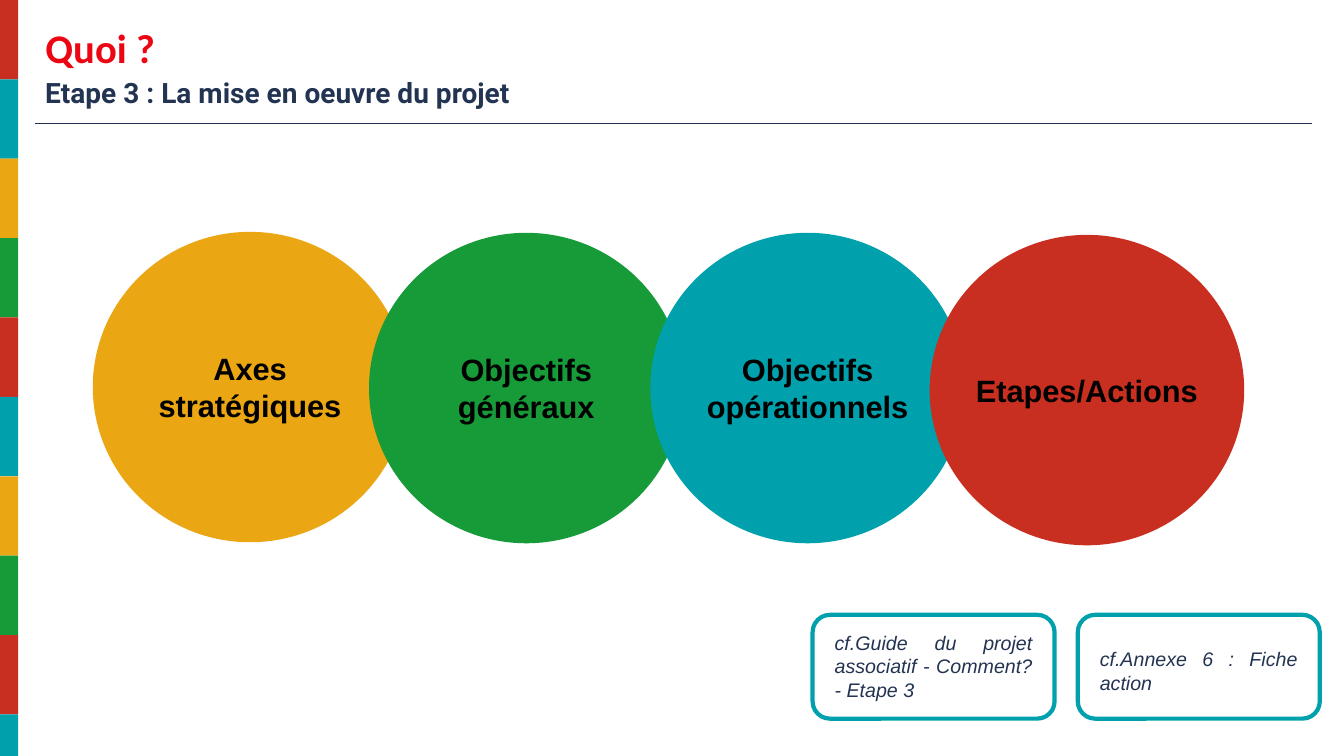
from lxml import etree
from pptx import Presentation
from pptx.dml.color import RGBColor
from pptx.enum import shapes, text
from pptx.oxml.ns import qn
from pptx.util import Inches, Pt

RED = RGBColor(0xC9, 0x2F, 0x20)
TEAL = RGBColor(0x00, 0xA1, 0xAC)
AMBER = RGBColor(0xEB, 0xA6, 0x13)
GREEN = RGBColor(0x17, 0x9A, 0x38)
TITLE_RED = RGBColor(0xEC, 0x06, 0x14)
NAVY = RGBColor(0x23, 0x33, 0x52)
RULE_NAVY = RGBColor(0x21, 0x30, 0x4E)
BLACK = RGBColor(0, 0, 0)

SLIDE_HEIGHT = 7.5
STRIPE_HEIGHT = 0.7875
CIRCLE_WIDTH, CIRCLE_HEIGHT = 3.12, 3.08
LABEL_WIDTH = 2.55
NOTE_WIDTH, NOTE_HEIGHT, NOTE_TOP = 2.4, 1.03, 6.1


class SlideBuilder:
    """Holds the current slide and its common text and shape style."""

    def __init__(self, slide):
        self.slide = slide

    def set_text(self, shape, words, size, color, font="Arial", bold=False, italic=False,
                 align=text.PP_ALIGN.LEFT, inset=0.1, anchor=text.MSO_ANCHOR.MIDDLE):
        frame = shape.text_frame
        frame.text = words
        frame.word_wrap = True
        frame.auto_size = text.MSO_AUTO_SIZE.NONE
        frame.vertical_anchor = anchor
        frame.margin_left = frame.margin_right = Inches(0.1)
        frame.margin_top = frame.margin_bottom = Inches(inset)
        paragraph = frame.paragraphs[0]
        paragraph.alignment = align
        style = paragraph.runs[0].font
        style.name, style.size = font, Pt(size)
        style.bold, style.italic = bold, italic
        style.color.rgb = color

    def title(self, words, left, top, width, height):
        title = self.slide.shapes.title
        title.left, title.top = Inches(left), Inches(top)
        title.width, title.height = Inches(width), Inches(height)
        self.set_text(title, words, 29, TITLE_RED, "Calibri", bold=True, inset=0.05)

    def text_box(self, words, left, top, width, height, size, color, **style):
        box = self.slide.shapes.add_textbox(
            Inches(left), Inches(top), Inches(width), Inches(height))
        self.set_text(box, words, size, color, **style)

    def shape(self, kind, left, top, width, height, fill=None, outline=None):
        shape = self.slide.shapes.add_shape(
            kind, Inches(left), Inches(top), Inches(width), Inches(height))
        shape.shadow.inherit = False
        if fill is None:
            shape.fill.background()
        else:
            shape.fill.solid()
            shape.fill.fore_color.rgb = fill
        if outline is None:
            shape.line.fill.background()
        else:
            shape.line.color.rgb = outline
            shape.line.width = Pt(3)

    def rule(self, left, right, top):
        line = self.slide.shapes.add_connector(
            shapes.MSO_CONNECTOR.STRAIGHT,
            Inches(left), Inches(top), Inches(right), Inches(top))
        line.line.color.rgb = RULE_NAVY
        line.line.width = Pt(0.75)
        etree.SubElement(line._element.spPr, qn("a:effectLst"))

    def circle(self, words, left, top, fill, label_height):
        self.shape(shapes.MSO_SHAPE.OVAL, left, top, CIRCLE_WIDTH, CIRCLE_HEIGHT, fill)
        self.text_box(words, left + (CIRCLE_WIDTH - LABEL_WIDTH) / 2,
                      top + (CIRCLE_HEIGHT - label_height) / 2,
                      LABEL_WIDTH, label_height, 22, BLACK,
                      bold=True, align=text.PP_ALIGN.CENTER)

    def note(self, words, left, text_top, text_height):
        self.shape(shapes.MSO_SHAPE.ROUNDED_RECTANGLE, left, NOTE_TOP,
                   NOTE_WIDTH, NOTE_HEIGHT, outline=TEAL)
        self.text_box(words, left + 0.12, text_top, 2.16, text_height, 14, NAVY,
                      italic=True, align=text.PP_ALIGN.JUSTIFY)


def main():
    presentation = Presentation()
    presentation.slide_width = Inches(13.33)
    presentation.slide_height = Inches(SLIDE_HEIGHT)
    builder = SlideBuilder(presentation.slides.add_slide(presentation.slide_layouts[5]))

    # Coloured stripes on the left edge, the last one cut at the slide's foot
    stripe_colors = [RED, TEAL, AMBER, GREEN]
    for index in range(10):
        top = index * STRIPE_HEIGHT
        builder.shape(shapes.MSO_SHAPE.RECTANGLE, -0.02, top, 0.2,
                      min(STRIPE_HEIGHT, SLIDE_HEIGHT - top),
                      stripe_colors[index % len(stripe_colors)])

    # Heading
    builder.title("Quoi ?", 0.35, 0.14, 12.66, 0.65)
    builder.text_box("Etape 3 : La mise en oeuvre du projet", 0.35, 0.7, 11.82, 0.44,
                     20, NAVY, font="Roboto", bold=True, inset=0.05,
                     anchor=text.MSO_ANCHOR.TOP)
    builder.rule(0.35, 13.01, 1.23)

    # Overlapping circles, from strategy to action
    for words, left, top, fill, label_height in [
        ("Axes stratégiques", 0.92, 2.3, AMBER, 0.94),
        ("Objectifs généraux", 3.66, 2.31, GREEN, 0.94),
        ("Objectifs opérationnels", 6.45, 2.31, TEAL, 0.94),
        ("Etapes/Actions", 9.22, 2.33, RED, 0.57),
    ]:
        builder.circle(words, left, top, fill, label_height)

    # Reference notes
    builder.note("cf.Guide du projet associatif - Comment? - Etape 3", 8.06, 6.15, 0.91)
    builder.note("cf.Annexe 6 : Fiche action", 10.69, 6.32, 0.67)

    presentation.save("out.pptx")


if __name__ == "__main__":
    main()
